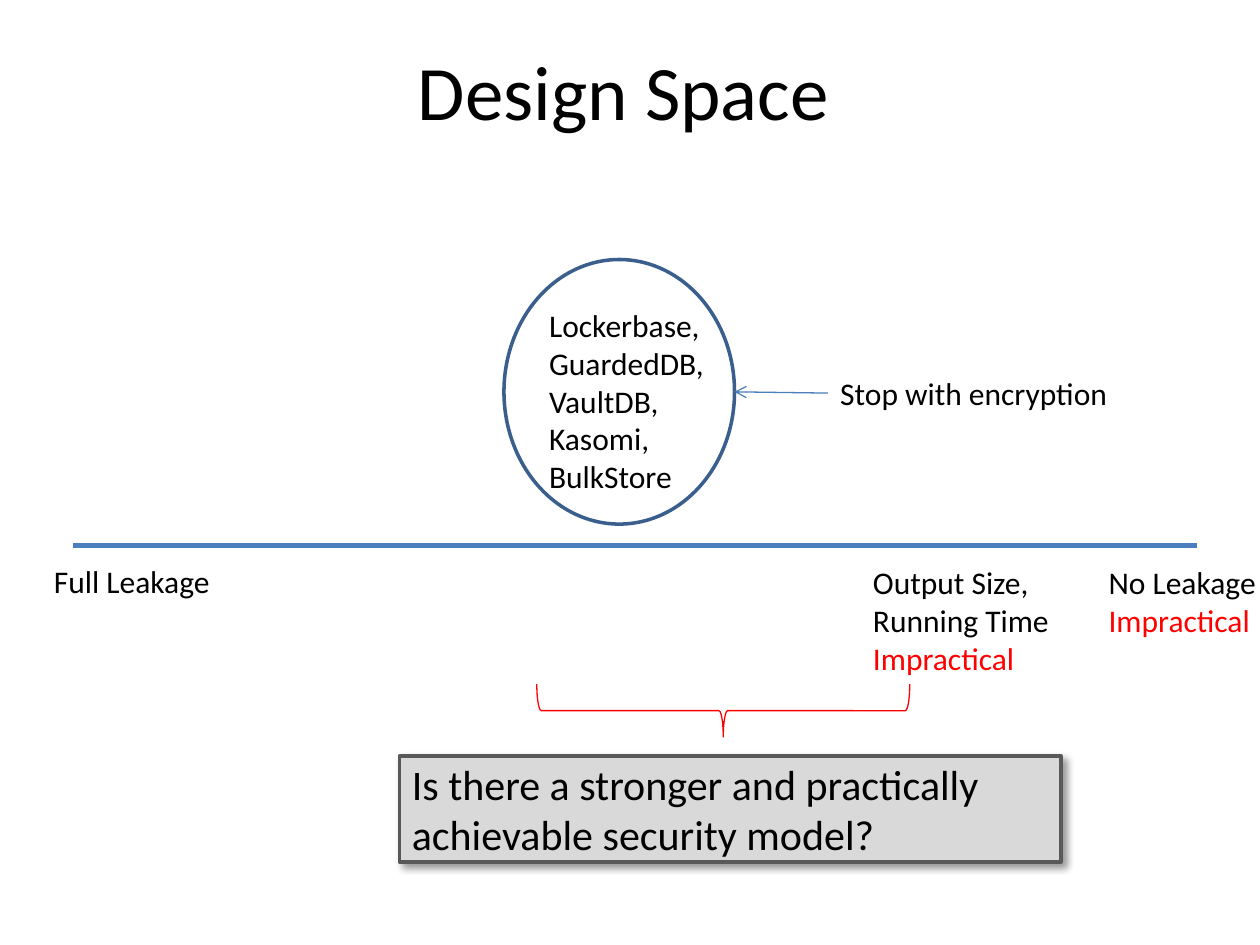
from lxml.etree import SubElement
from pptx import Presentation
from pptx.dml.color import RGBColor
from pptx.enum.shapes import MSO_CONNECTOR, MSO_SHAPE
from pptx.enum.text import MSO_ANCHOR, MSO_AUTO_SIZE, PP_ALIGN
from pptx.oxml.ns import qn
from pptx.util import Pt

BLACK = RGBColor(0x00, 0x00, 0x00)
RED = RGBColor(0xFF, 0x00, 0x00)
AXIS_BLUE = RGBColor(0x4B, 0x7E, 0xBC)
OUTLINE_BLUE = RGBColor(0x3A, 0x5F, 0x8C)
LIGHT_GRAY = RGBColor(0xD9, 0xD9, 0xD9)
DARK_GRAY = RGBColor(0x59, 0x59, 0x59)


def apply_format(target, values):
    for name, value in values.items():
        setattr(target, name, value)


def write_lines(frame, lines, size, align=PP_ALIGN.LEFT):
    for index, (text, color) in enumerate(lines):
        paragraph = frame.paragraphs[0] if index == 0 else frame.add_paragraph()
        paragraph.alignment = align
        run = paragraph.add_run()
        run.text = text
        apply_format(run.font, {"name": "Calibri", "size": Pt(size)})
        run.font.color.rgb = color


def add_label(slide, bounds, lines, wrap=False):
    label = slide.shapes.add_textbox(*map(Pt, bounds))
    apply_format(label.text_frame, {
        "word_wrap": wrap,
        "auto_size": MSO_AUTO_SIZE.SHAPE_TO_FIT_TEXT,
    })
    write_lines(label.text_frame, lines, 18)
    return label


def add_title(slide, text):
    title = slide.shapes.add_textbox(*map(Pt, (32.4, 12.24, 648, 77.76)))
    apply_format(title.text_frame, {
        "word_wrap": True,
        "vertical_anchor": MSO_ANCHOR.MIDDLE,
    })
    write_lines(title.text_frame, [(text, BLACK)], 44, PP_ALIGN.CENTER)


def add_outline(slide, preset, bounds, color, width, fill=None):
    outline = slide.shapes.add_shape(preset, *map(Pt, bounds))
    outline.shadow.inherit = False
    if fill is None:
        outline.fill.background()
    else:
        outline.fill.solid()
        outline.fill.fore_color.rgb = fill
    outline.line.color.rgb = color
    outline.line.width = Pt(width)
    return outline


def add_line(slide, start, end, width):
    line = slide.shapes.add_connector(MSO_CONNECTOR.STRAIGHT, *map(Pt, start + end))
    line.line.color.rgb = AXIS_BLUE
    line.line.width = Pt(width)
    SubElement(line._element.spPr, qn("a:effectLst"))
    return line


def add_arrow(slide, source, start, end):
    arrow = add_line(slide, start, end, 0.75)
    arrow.begin_connect(source, 1)
    SubElement(arrow.line._get_or_add_ln(), qn("a:tailEnd"), type="arrow")


def add_question(slide, bounds, text):
    question = add_outline(slide, MSO_SHAPE.RECTANGLE, bounds, DARK_GRAY, 2, LIGHT_GRAY)
    apply_format(question.text_frame, {
        "word_wrap": True,
        "vertical_anchor": MSO_ANCHOR.MIDDLE,
    })
    write_lines(question.text_frame, [(text, BLACK)], 24)
    effects = question._element.spPr.find(qn("a:effectLst"))
    shadow = SubElement(effects, qn("a:outerShdw"), blurRad=str(Pt(4)),
                        dist=str(Pt(3)), dir=str(45 * 60000),
                        algn="tl", rotWithShape="0")
    tint = SubElement(shadow, qn("a:srgbClr"), val=str(BLACK))
    SubElement(tint, qn("a:alpha"), val="40000")


def main():
    deck = Presentation()
    apply_format(deck, {"slide_width": Pt(720), "slide_height": Pt(540)})
    slide = deck.slides.add_slide(deck.slide_layouts[6])

    add_title(slide, "Design Space")
    add_line(slide, (41.76, 311.76), (684, 311.76), 3)
    add_label(slide, (23.76, 317.52, 104.4, 28.8), [("Full Leakage", BLACK)])
    add_label(slide, (626.4, 318.24, 99.36, 51.12),
              [("No Leakage", BLACK), ("Impractical", RED)])
    systems = ("Lockerbase, GuardedDB,", "VaultDB,", "Kasomi,", "BulkStore")
    add_label(slide, (306.72, 171.36, 125.28, 116.64),
              [(system, BLACK) for system in systems], wrap=True)
    add_label(slide, (491.76, 318.24, 115.92, 72.72),
              [("Output Size,", BLACK), ("Running Time", BLACK), ("Impractical", RED)])
    encryption = add_label(slide, (473.04, 210.24, 169.2, 28.8),
                           [("Stop with encryption", BLACK)])
    add_outline(slide, MSO_SHAPE.OVAL, (288, 148.32, 131.76, 151.2), OUTLINE_BLUE, 2)
    add_arrow(slide, encryption, (473.04, 224.64), (419.76, 223.92))
    brace = add_outline(slide, MSO_SHAPE.RIGHT_BRACE,
                        (398.16, 299.52, 30.24, 213.12), RED, 0.75)
    brace.rotation = 90
    add_question(slide, (228.24, 432, 378, 60.48),
                 "Is there a stronger and practically achievable security model?")

    deck.save("out.pptx")


if __name__ == "__main__":
    main()
